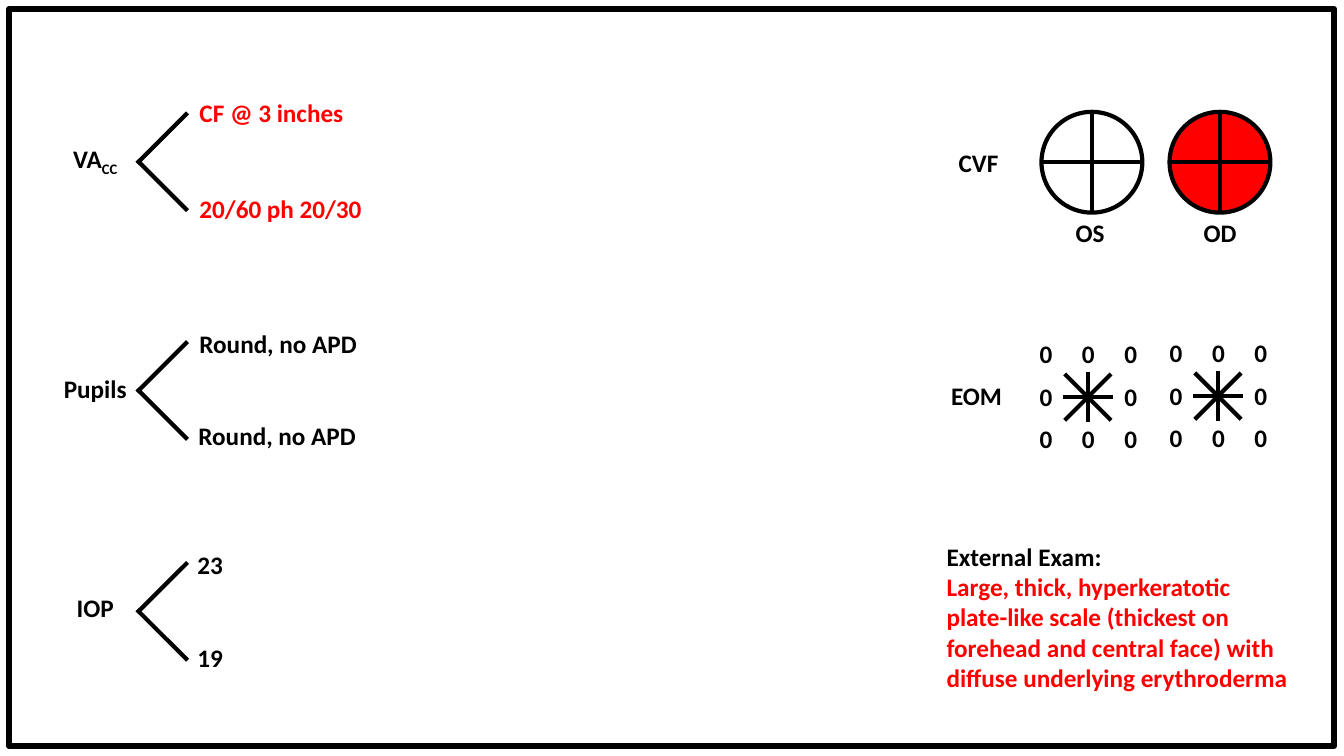
"""Build the eye examination summary slide."""
from lxml import etree
from pptx import Presentation
from pptx import util as u
from pptx.dml.color import RGBColor
from pptx.enum import shapes, text
from pptx.oxml.ns import qn

COLORS = {"ink": "000000", "alert": "FF0000"}

prs = Presentation()
prs.slide_width, prs.slide_height = u.Inches(13.33), u.Inches(7.5)
s = prs.slides.add_slide(prs.slide_layouts[6])


def add_line(x1, y1, x2, y2):
    c = s.shapes.add_connector(shapes.MSO_CONNECTOR.STRAIGHT, u.Inches(x1), u.Inches(y1), u.Inches(x2), u.Inches(y2))
    c.line.color.rgb = RGBColor.from_string(COLORS["ink"])
    c.line.width = u.Pt(3)
    etree.SubElement(c._element.spPr, qn("a:effectLst"))


def add_text(x, y, w, h, lines, center=False):
    tf = s.shapes.add_textbox(u.Inches(x), u.Inches(y), u.Inches(w), u.Inches(h)).text_frame
    tf.word_wrap = True
    tf.auto_size = text.MSO_AUTO_SIZE.SHAPE_TO_FIT_TEXT
    for i, (words, color) in enumerate(lines):
        p = tf.add_paragraph() if i else tf.paragraphs[0]
        p.add_run().text = words
        p.font.name, p.font.size, p.font.bold = "Calibri", u.Pt(18), True
        p.font.color.rgb = RGBColor.from_string(COLORS[color])
        if center:
            p.alignment = text.PP_ALIGN.CENTER
    return tf


frame = s.shapes.add_shape(shapes.MSO_SHAPE.RECTANGLE, u.Inches(0.09), u.Inches(0.09), u.Inches(13.14), u.Inches(7.31))
frame.shadow.inherit = False
frame.fill.background()
frame.line.color.rgb = RGBColor.from_string(COLORS["ink"])
frame.line.width = u.Pt(4.5)

tests = [
    ("VA", 1.37, 1.12, "alert", (1.88, 0.92, "CF @ 3 inches"), (1.88, 1.87, "20/60 ph 20/30")),
    ("Pupils", 3.65, 3.39, "ink", (1.88, 3.21, "Round, no APD"), (1.87, 4.12, "Round, no APD")),
    ("IOP", 5.83, 5.58, "ink", (1.86, 5.4, "23"), (1.86, 6.32, "19")),
]
for label, label_y, top, color, *results in tests:
    add_line(1.86, top, 1.36, top + 0.5)
    add_line(1.86, top + 0.97, 1.36, top + 0.47)
    tf = add_text(0.53, label_y, 0.83, 0.4, [(label, "ink")], center=True)
    if label == "VA":
        r = tf.paragraphs[0].add_run()
        r.text = "CC"
        r.font._element.set("baseline", "-25000")
    for x, y, words in results:
        add_text(x, y, 1.95, 0.4, [(words, color)])

add_text(9.29, 1.41, 0.83, 0.4, [("CVF", "ink")], center=True)
for eye, x, fill in [("OS", 10.33, None), ("OD", 11.6, "alert")]:
    sp = s.shapes.add_shape(shapes.MSO_SHAPE.OVAL, u.Inches(x), u.Inches(1.11), u.Inches(1), u.Inches(1))
    sp.shadow.inherit = False
    if fill:
        sp.fill.solid()
        sp.fill.fore_color.rgb = RGBColor.from_string(COLORS[fill])
    else:
        sp.fill.background()
    sp.line.color.rgb = RGBColor.from_string(COLORS["ink"])
    sp.line.width = u.Pt(3)
    add_line(x + 0.5, 1.11, x + 0.5, 2.11)
    add_line(x, 1.61, x + 1, 1.61)
    add_text(x + 0.24, 2.11, 0.53, 0.4, [(eye, "ink")])

add_text(9.27, 3.72, 0.83, 0.4, [("EOM", "ink")], center=True)
for cx, cy in [(10.79, 3.94), (12.08, 3.93)]:
    for dx, dy in [(0, 0.25), (0.25, 0), (0.23, 0.23), (0.23, -0.23)]:
        add_line(cx - dx, cy - dy, cx + dx, cy + dy)
    for row in (-1, 0, 1):
        for col in (-1, 0, 1):
            if row or col:
                add_text(cx - 0.26 + 0.42 * col, cy - 0.21 + 0.42 * row, 0.53, 0.4, [("0", "ink")], center=True)

add_text(9.29, 5.32, 3.63, 1.62, [
    ("External Exam:", "ink"),
    ("Large, thick, hyperkeratotic plate-like scale (thickest on forehead and central face) "
     "with diffuse underlying erythroderma", "alert"),
])

prs.save("out.pptx")
